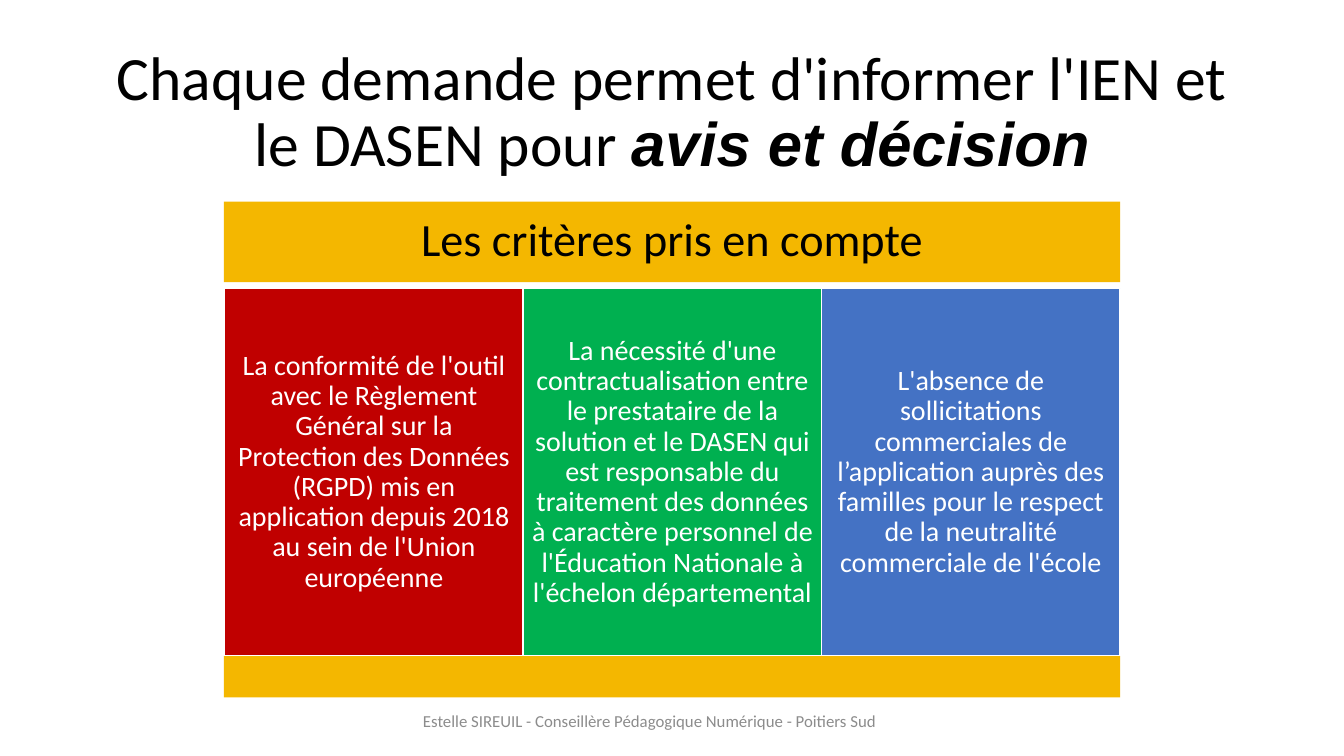
from dataclasses import dataclass

from pptx import Presentation
from pptx import util as u
from pptx.dml.color import RGBColor
from pptx.enum import shapes, text

PX = 9144  # EMU per px, 100 px to the inch


@dataclass(frozen=True)
class Theme:
    sans: str = "Calibri"
    accent: str = "Arial"
    black: str = "000000"
    white: str = "FFFFFF"
    grey: str = "8C8C8C"
    gold: str = "F4B700"
    red: str = "C00000"
    green: str = "00B050"
    blue: str = "4472C4"
    title: int = 44
    head: int = 33
    body: int = 20
    foot: int = 12


THEME = Theme()

CARDS = [
    (THEME.red, "La conformité de l'outil avec le Règlement Général sur la "
     "Protection des Données (RGPD) mis en application depuis 2018 au sein "
     "de l'Union européenne"),
    (THEME.green, "La nécessité d'une contractualisation entre le prestataire "
     "de la solution et le DASEN qui est responsable du traitement des données "
     "à caractère personnel de l'Éducation Nationale à l'échelon départemental"),
    (THEME.blue, "L'absence de sollicitations commerciales de l’application "
     "auprès des familles pour le respect de la neutralité commerciale de l'école"),
]


def rgb(code):
    return RGBColor.from_string(code)


def place(shape, box):
    shape.left, shape.top, shape.width, shape.height = (u.Emu(n * PX) for n in box)


def add_run(para, words, size, color, face=THEME.sans, strong=False):
    run = para.add_run()
    run.text = words
    font = run.font
    font.name, font.size, font.color.rgb = face, u.Pt(size), rgb(color)
    font.bold = font.italic = strong


def set_frame(shape, pad=(10, 5), lead=0.9):
    """Centre the text both ways and return its first paragraph."""
    frame = shape.text_frame
    frame.word_wrap = True
    frame.auto_size = text.MSO_AUTO_SIZE.NONE
    frame.vertical_anchor = text.MSO_ANCHOR.MIDDLE
    frame.margin_left = frame.margin_right = u.Emu(pad[0] * PX)
    frame.margin_top = frame.margin_bottom = u.Emu(pad[1] * PX)
    para = frame.paragraphs[0]
    para.alignment = text.PP_ALIGN.CENTER
    para.line_spacing = lead
    return para


def add_rect(slide, box, fill, edge=None):
    rect = slide.shapes.add_shape(shapes.MSO_SHAPE.RECTANGLE, 0, 0, 0, 0)
    place(rect, box)
    rect.shadow.inherit = False
    rect.fill.solid()
    rect.fill.fore_color.rgb = rgb(fill)
    if edge:
        rect.line.color.rgb = rgb(edge)
        rect.line.width = u.Pt(1)
    else:
        rect.line.fill.background()
    return rect


def add_title(slide, box):
    title = slide.shapes.title
    place(title, box)
    para = set_frame(title)
    add_run(para, "Chaque demande permet d'informer l'IEN et le DASEN pour ",
            THEME.title, THEME.black)
    add_run(para, "avis et décision", THEME.title, THEME.black, THEME.accent, True)


def add_panel(slide, box):
    """Header band, one card per criterion, and a closing band."""
    left, top, width, height = box
    head, gap, base, inset = 80, 6, 41, 1
    band = add_rect(slide, (left, top, width, head), THEME.gold)
    add_run(set_frame(band, (14, 14)), "Les critères pris en compte",
            THEME.head, THEME.black)
    wide = (width - inset) // len(CARDS)
    tall = height - head - gap - base
    for i, (fill, words) in enumerate(CARDS):
        spot = (left + inset + i * wide, top + head + gap, wide, tall)
        card = add_rect(slide, spot, fill, THEME.white)
        add_run(set_frame(card, (8, 8)), words, THEME.body, THEME.white)
    add_rect(slide, (left, top + height - base, width, base), THEME.gold)


def add_foot(slide, box):
    foot = slide.shapes.add_textbox(0, 0, 0, 0)
    place(foot, box)
    add_run(set_frame(foot, lead=1.0),
            "Estelle SIREUIL - Conseillère Pédagogique Numérique - Poitiers Sud",
            THEME.foot, THEME.grey)


def main():
    deck = Presentation()
    deck.slide_width, deck.slide_height = u.Emu(1333 * PX), u.Emu(750 * PX)
    slide = deck.slides.add_slide(deck.slide_layouts[5])
    add_title(slide, (92, 40, 1150, 145))
    add_panel(slide, (222, 200, 889, 492))
    add_foot(slide, (398, 695, 493, 40))
    deck.save("out.pptx")


if __name__ == "__main__":
    main()
